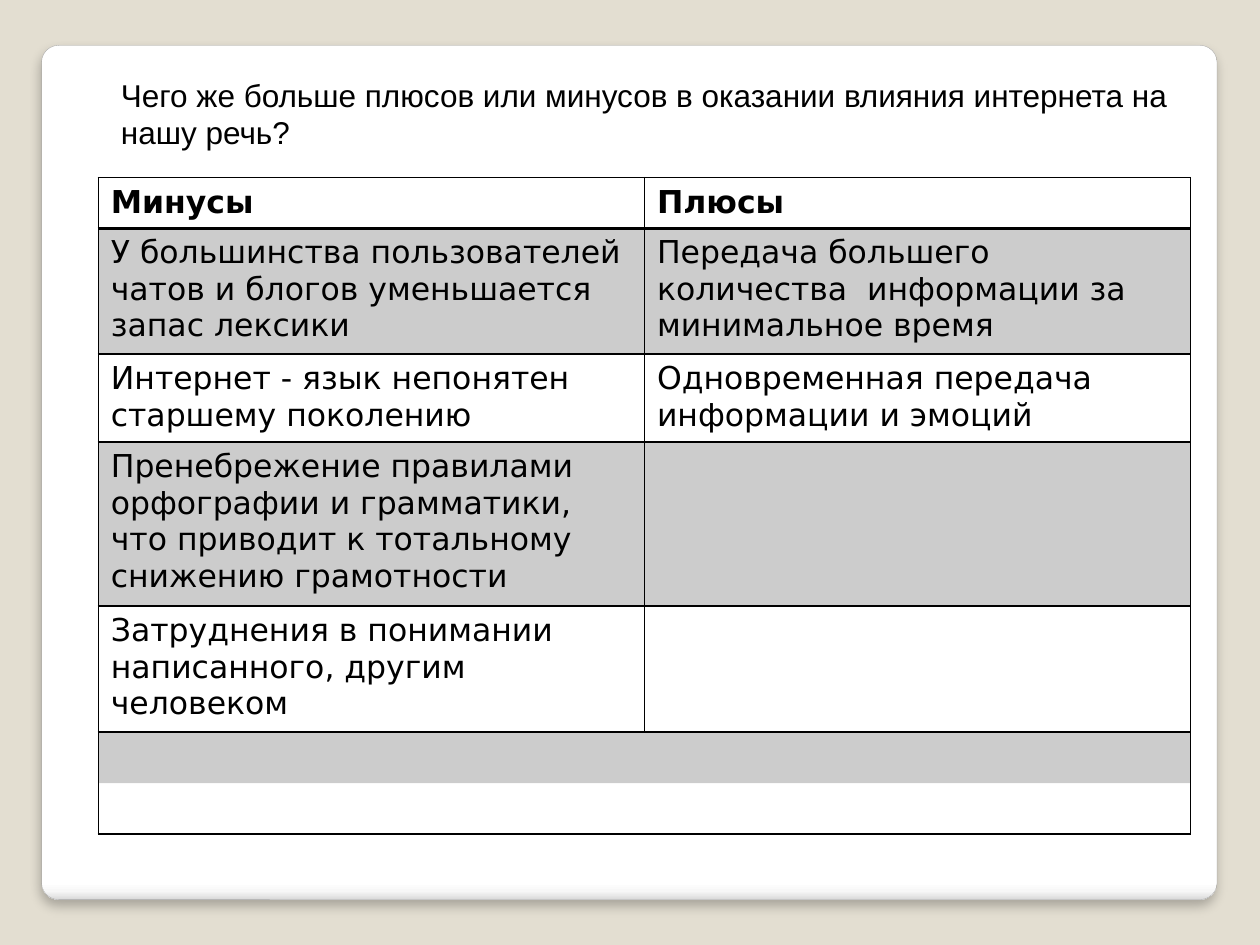
"""Build a slide comparing the drawbacks and benefits of the internet for speech."""
from typing import NamedTuple

from lxml.etree import SubElement
from pptx import Presentation
from pptx.dml.color import RGBColor
from pptx.enum.shapes import MSO_SHAPE
from pptx.enum.text import MSO_ANCHOR, MSO_AUTO_SIZE, PP_ALIGN
from pptx.oxml import parse_xml
from pptx.oxml.ns import nsdecls, qn
from pptx.util import Inches, Pt

BLACK = "000000"
PANEL_STOPS = [(0, "FFFFFF"), (98, "FFFFFF"), (99, "F7F7F7"), (100, "DADADA")]


class ComparisonRow(NamedTuple):
    height: float
    minus: str = ""
    plus: str = ""
    shaded: bool = False
    merged: bool = False


ROWS = [
    ComparisonRow(0.4, "Минусы", "Плюсы"),
    ComparisonRow(1, "У большинства пользователей чатов и блогов уменьшается запас лексики",
                  "Передача большего количества  информации за минимальное время", shaded=True),
    ComparisonRow(0.7, "Интернет - язык непонятен старшему поколению",
                  "Одновременная передача информации и эмоций"),
    ComparisonRow(1.3, "Пренебрежение правилами орфографии и грамматики, "
                  "что приводит к тотальному снижению грамотности", shaded=True),
    ComparisonRow(1, "Затруднения в понимании написанного, другим человеком"),
    ComparisonRow(0.4, shaded=True, merged=True),
    ComparisonRow(0.4, merged=True),
]


def color(value: str) -> RGBColor:
    return RGBColor.from_string(value)


def write(frame, text: str, *, font: str, size: float = 18, bold: bool = False) -> None:
    para = frame.paragraphs[0]
    para.alignment = PP_ALIGN.LEFT
    para.font.size = Pt(size)
    if not text:
        SubElement(para._p, qn("a:endParaRPr"), sz=str(int(size * 100)))
        return
    span = para.add_run()
    span.text = text
    span.font.name = font
    span.font.size = Pt(size)
    span.font.bold = bold
    span.font.color.rgb = color(BLACK)


def draw_panel(slide) -> None:
    panel = slide.shapes.add_shape(MSO_SHAPE.ROUNDED_RECTANGLE, Inches(0.33), Inches(0.36),
                                   Inches(9.33), Inches(6.78))
    panel.adjustments[0] = 0.02
    panel.line.color.rgb = color("A4A4A4")
    panel.line.width = Pt(0.16)
    stops = "".join(f'<a:gs pos="{position * 1000}"><a:srgbClr val="{value}"/></a:gs>'
                    for position, value in PANEL_STOPS)
    properties = panel._element.spPr
    properties.insert(2, parse_xml(
        f'<a:gradFill {nsdecls("a")} rotWithShape="1"><a:gsLst>{stops}</a:gsLst>'
        '<a:lin ang="5400000" scaled="0"/></a:gradFill>'))
    properties.append(parse_xml(
        f'<a:effectLst {nsdecls("a")}><a:outerShdw blurRad="{Pt(6)}" dist="{Pt(4)}" '
        f'dir="5400000" rotWithShape="0"><a:srgbClr val="{BLACK}"><a:alpha val="25000"/>'
        '</a:srgbClr></a:outerShdw></a:effectLst>'))
    slide.shapes._spTree.insert(2, panel._element)


def set_borders(cell, widths: dict[str, float]) -> None:
    properties = cell._tc.get_or_add_tcPr()
    for side in "LRTB":
        width = widths.get(side, 1)
        border = SubElement(properties, qn(f"a:ln{side}"), w=str(Pt(width)))
        if width:
            fill = SubElement(border, qn("a:solidFill"))
            SubElement(fill, qn("a:srgbClr"), val=BLACK)
        else:
            SubElement(border, qn("a:noFill"))


def set_shade(cell, shaded: bool) -> None:
    if not shaded:
        cell.fill.background()
        return
    cell.fill.solid()
    cell.fill.fore_color.rgb = color(BLACK)
    shade = cell._tc.tcPr.find(qn("a:solidFill")).find(qn("a:srgbClr"))
    SubElement(shade, qn("a:alpha"), val="20000")


def draw_table(slide, rows: list[ComparisonRow]) -> None:
    height = sum(row.height for row in rows)
    table = slide.shapes.add_table(len(rows), 2, Inches(0.78), Inches(1.41),
                                   Inches(8.67), Inches(height)).table
    table.first_row = table.horz_banding = False
    last = len(rows) - 1
    for index, row in enumerate(rows):
        table.rows[index].height = Inches(row.height)
        widths = {0: {"B": 2}, 1: {"T": 2}, last - 1: {"B": 0}, last: {"T": 0}}.get(index, {})
        for column, text in enumerate((row.minus, row.plus)):
            cell = table.cell(index, column)
            write(cell.text_frame, text, font="DejaVu Sans", bold=index == 0)
            set_borders(cell, widths)
            set_shade(cell, row.shaded)
        if row.merged:
            table.cell(index, 0).merge(table.cell(index, 1))


def draw_title(slide, text: str) -> None:
    title = slide.shapes.title
    title.left, title.top = Inches(0.86), Inches(0.55)
    title.width, title.height = Inches(8.52), Inches(0.71)
    frame = title.text_frame
    frame.word_wrap = True
    frame.auto_size = MSO_AUTO_SIZE.NONE
    frame.vertical_anchor = MSO_ANCHOR.TOP
    write(frame, text, font="Arial")


def main() -> None:
    deck = Presentation()
    deck.slide_width, deck.slide_height = Inches(10), Inches(7.5)
    page = deck.slides.add_slide(deck.slide_layouts[5])
    page.background.fill.solid()
    page.background.fill.fore_color.rgb = color("E3DED1")
    draw_panel(page)
    draw_title(page, "Чего же больше плюсов или минусов в оказании влияния интернета на нашу речь?")
    draw_table(page, ROWS)
    deck.save("out.pptx")


if __name__ == "__main__":
    main()
